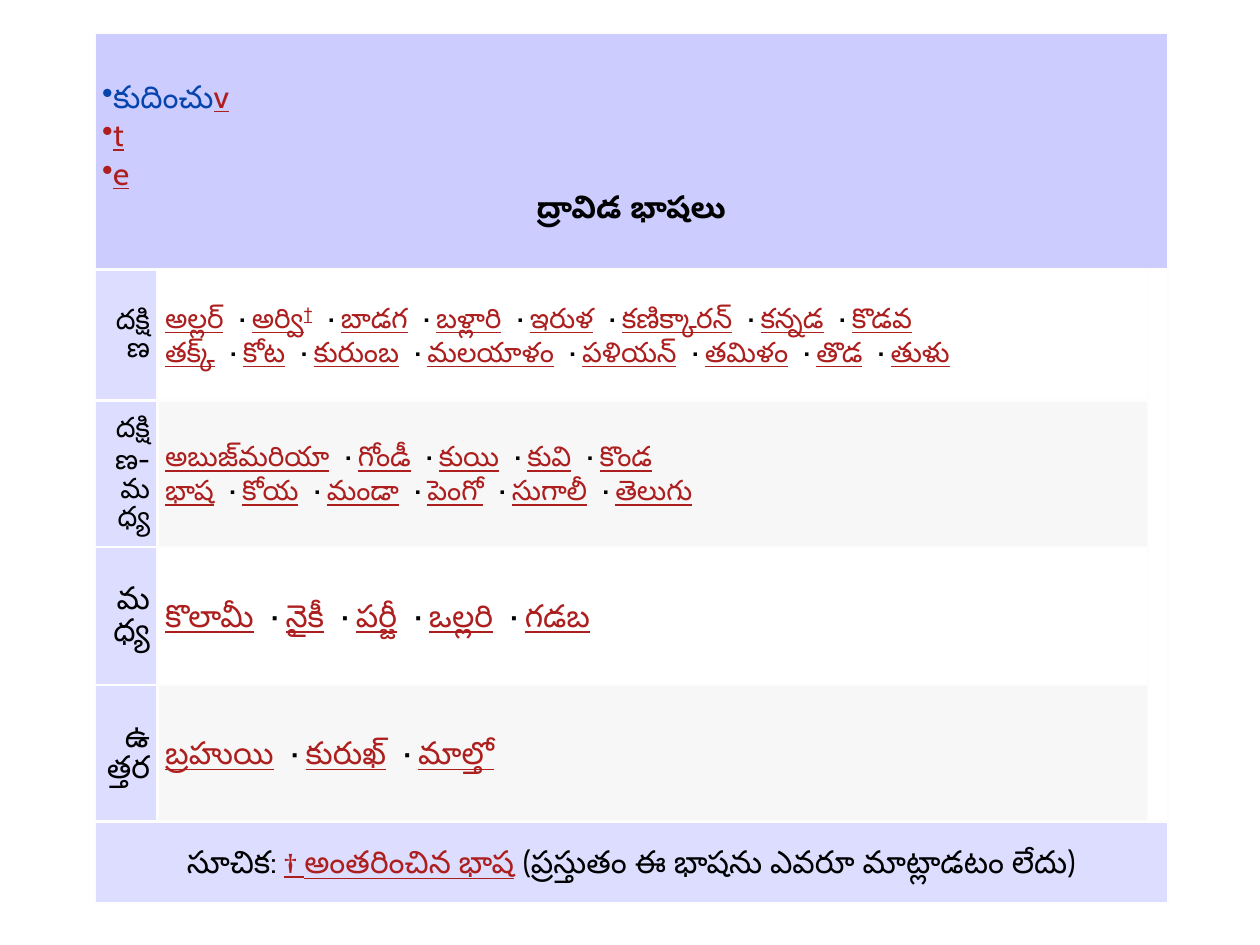
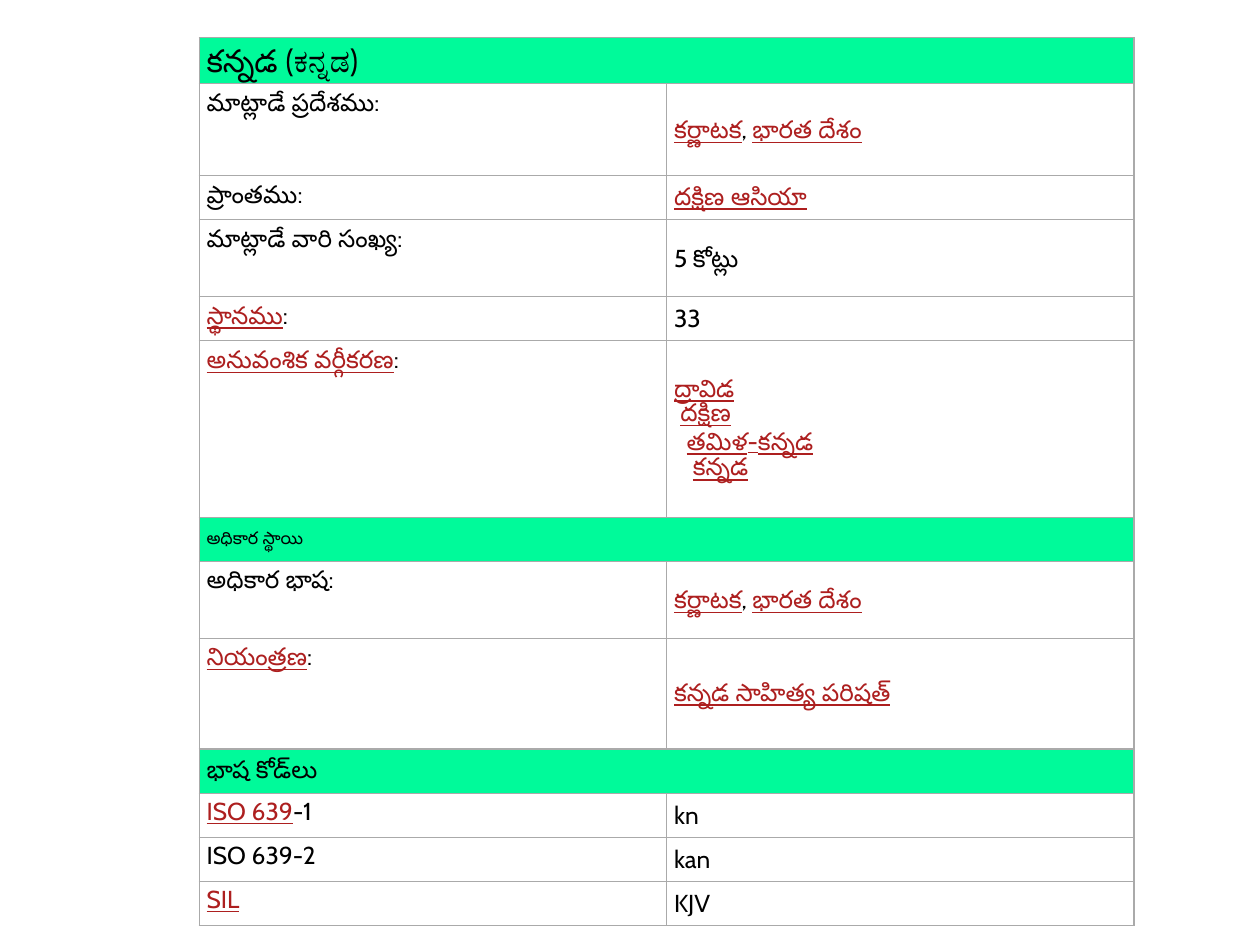
"""Build two table slides about the Dravidian languages and Kannada."""
from lxml import etree
from pptx import Presentation, util as u
from pptx.dml.color import RGBColor
from pptx.enum import text
from pptx.oxml import ns

COLORS = {
    "text": "000000", "link": "AD1F1F", "collapse": "0645AD",
    "title band": "CCCCFF", "label": "DDDDFF", "stripe": "F7F7F7", "gap line": "FDFDFD",
    "section": "00FA9A", "white": "FFFFFF", "grid line": "AAAAAA",
}
FONT = "Cabin"
MIDDLE, TOP = text.MSO_ANCHOR.MIDDLE, text.MSO_ANCHOR.TOP
LEFT, CENTER, RIGHT = text.PP_ALIGN.LEFT, text.PP_ALIGN.CENTER, text.PP_ALIGN.RIGHT
HARD_SPACE = chr(160)
NON_JOINER = chr(8204)
DOT = f"{HARD_SPACE * 2}·{HARD_SPACE}"


def add_grid(slide, left, top, columns, rows, line_color, line_width):
    """Add a plain table whose cells all have the same border."""
    frame = slide.shapes.add_table(len(rows), len(columns), u.Inches(left), u.Inches(top),
                                   u.Inches(sum(columns)), u.Inches(sum(rows)))
    table = frame.table
    table.first_row = table.horz_banding = False
    for column, width in zip(table.columns, columns):
        column.width = u.Inches(width)
    for row, height in zip(table.rows, rows):
        row.height = u.Inches(height)
    for cell in table.iter_cells():
        properties = cell._tc.get_or_add_tcPr()
        for side in ("a:lnL", "a:lnR", "a:lnT", "a:lnB"):
            line = etree.SubElement(properties, ns.qn(side), w=str(u.Pt(line_width)))
            solid = etree.SubElement(line, ns.qn("a:solidFill"))
            etree.SubElement(solid, ns.qn("a:srgbClr"), val=COLORS[line_color])
        cell.fill.background()
        cell.margin_left = cell.margin_right = u.Inches(0.06)
        cell.margin_top = cell.margin_bottom = u.Inches(0.03)
    return table


def write(cell, content, size, fill=None, anchor=MIDDLE, align=LEFT):
    """Write one paragraph per line; the parts between asterisks are links."""
    cell.vertical_anchor = anchor
    if fill:
        cell.fill.solid()
        cell.fill.fore_color.rgb = RGBColor.from_string(COLORS[fill])
    cell.text_frame.text = content
    for paragraph in cell.text_frame.paragraphs:
        pieces = paragraph.text.split("*")
        paragraph.text = ""
        paragraph.alignment = align
        for index, piece in enumerate(pieces):
            if not piece:
                continue
            is_link = index % 2 == 1 or piece == "†"
            run = paragraph.add_run()
            run.text = piece
            run.font.name, run.font.size = FONT, u.Pt(size)
            run.font.bold, run.font.underline = piece == DOT, is_link
            run.font.color.rgb = RGBColor.from_string(COLORS["link" if is_link else "text"])
            if piece == "†":
                run._r.get_or_add_rPr().set("baseline", "30000")


presentation = Presentation()
presentation.slide_width, presentation.slide_height = u.Inches(10), u.Inches(7.5)
blank = presentation.slide_layouts[6]

slide = presentation.slides.add_slide(blank)
families = add_grid(slide, 0.75, 0.26, [0.5, 7.86, 0.12],
                    [1.88, 1.04, 1.16, 1.1, 1.08, 0.65], "gap line", 1.5)
for row in (0, 5):
    families.cell(row, 0).merge(families.cell(row, 2))
families.cell(1, 2).merge(families.cell(4, 2))

header = families.cell(0, 0)
write(header, "కుదించు*v*\n*t*\n*e*\nద్రావిడ భాషలు", 18, "title band")
*menu, title = header.text_frame.paragraphs
for paragraph in menu:
    etree.SubElement(paragraph._p.get_or_add_pPr(), ns.qn("a:buChar"), char="•")
menu[0].runs[0].font.color.rgb = RGBColor.from_string(COLORS["collapse"])
title.alignment = CENTER
title.runs[0].font.bold = True

branches = [
    ("దక్షిణ", 16, None,
     ["అల్లర్", "అర్వి**†", "బాడగ", "బళ్లారి", "ఇరుళ", "కణిక్కారన్", "కన్నడ", "కొడవ తక్క్",
      "కోట", "కురుంబ", "మలయాళం", "పళియన్", "తమిళం", "తొడ", "తుళు"]),
    ("దక్షిణ-మధ్య", 16, "stripe",
     [f"అబుజ్{NON_JOINER}మరియా", "గోండీ", "కుయి", "కువి", "కొండ భాష", "కోయ", "మండా",
      "పెంగో", "సుగాలీ", "తెలుగు"]),
    ("మధ్య", 18, None, ["కొలామీ", "నైకీ", "పర్జీ", "ఒల్లరి", "గడబ"]),
    ("ఉత్తర", 18, "stripe", ["బ్రహుయి", "కురుఖ్", "మాల్తో"]),
]
for row, (branch, size, fill, languages) in enumerate(branches, start=1):
    write(families.cell(row, 0), branch, size, "label", align=RIGHT)
    write(families.cell(row, 1), DOT.join(f"*{name}*" for name in languages), size, fill)
write(families.cell(5, 0),
      f"సూచిక:{HARD_SPACE}*† అంతరించిన భాష*{HARD_SPACE}(ప్రస్తుతం ఈ భాషను ఎవరూ మాట్లాడటం లేదు)",
      18, "label", align=CENTER)

slide = presentation.slides.add_slide(blank)
LINE = 0.35
places = f"*కర్ణాటక*,{HARD_SPACE}*భారత దేశం*"
facts = [
    (LINE, "కన్నడ (ಕನ್ನಡ)", None, 18),
    (0.73, "మాట్లాడే ప్రదేశము:", places, 14),
    (LINE, "ప్రాంతము:", "*దక్షిణ ఆసియా*", 14),
    (0.61, "మాట్లాడే వారి సంఖ్య:", "5 కోట్లు", 14),
    (LINE, "*స్థానము*:", "33", 14),
    (1.4, "*అనువంశిక వర్గీకరణ*:", "*ద్రావిడ*\n*దక్షిణ*\n*తమిళ-కన్నడ*\n*కన్నడ*", 14),
    (LINE, "అధికార స్థాయి", None, 10),
    (0.61, "అధికార భాష:", places, 14),
    (0.88, "*నియంత్రణ*:", "*కన్నడ సాహిత్య పరిషత్*", 14),
    (LINE, f"భాష కోడ్{NON_JOINER}లు", None, 14),
    (LINE, "*ISO 639*-1", "kn", 14),
    (LINE, "ISO 639-2", "kan", 14),
    (LINE, "*SIL*", "KJV", 14),
]
kannada = add_grid(slide, 1.58, 0.3, [3.71, 3.71], [fact[0] for fact in facts],
                   "grid line", 0.75)
for row, (height, label, value, size) in enumerate(facts):
    label_cell, value_cell = kannada.cell(row, 0), kannada.cell(row, 1)
    if value is None:
        label_cell.merge(value_cell)
        write(label_cell, label, size, "section")
    else:
        write(label_cell, label, size, "white", TOP)
        write(value_cell, value, size, "white")
        for level, paragraph in enumerate(value_cell.text_frame.paragraphs):
            paragraph._p.get_or_add_pPr().set("marL", str(u.Inches(0.05 * level)))

presentation.save("out.pptx")
